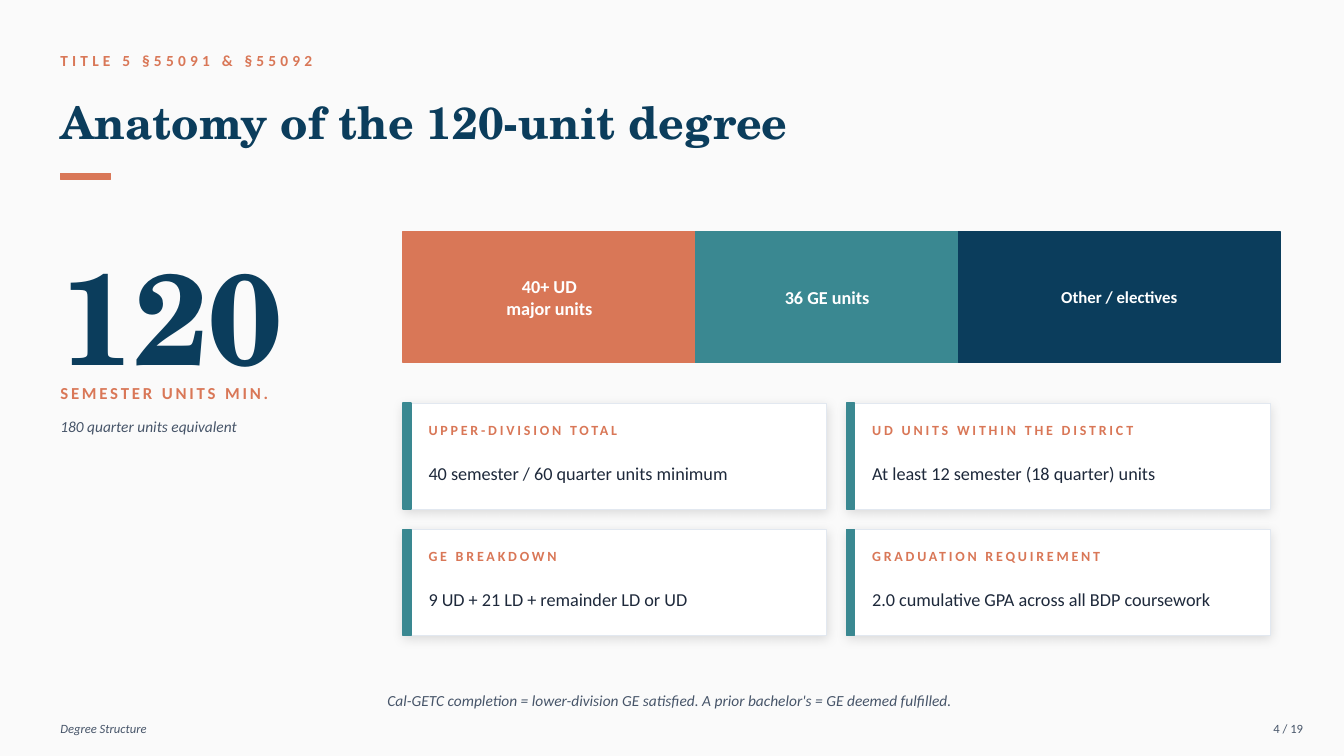
from dataclasses import dataclass

from lxml import etree
from pptx import Presentation
from pptx.dml.color import RGBColor
from pptx.enum.shapes import MSO_SHAPE
from pptx.enum.text import MSO_ANCHOR, MSO_AUTO_SIZE, PP_ALIGN
from pptx.oxml.ns import qn
from pptx.util import Cm, Pt

RECTANGLE = MSO_SHAPE.RECTANGLE
TOP, MIDDLE = MSO_ANCHOR.TOP, MSO_ANCHOR.MIDDLE
LEFT, CENTER, RIGHT = PP_ALIGN.LEFT, PP_ALIGN.CENTER, PP_ALIGN.RIGHT
NO_AUTOFIT = MSO_AUTO_SIZE.NONE


@dataclass(frozen=True)
class TextStyle:
    size: float
    color: str
    font: str = "Calibri"
    bold: bool = False
    italic: bool = False
    spacing: float = 0


class Theme:
    """Colours and type sizes."""
    PAPER, WHITE, BORDER = "FAFAFA", "FFFFFF", "E2E8F0"
    NAVY, TEAL, CORAL = "0B3D5C", "3A8891", "D97757"
    INK, MUTED, SHADOW = "1E293B", "475569", "000000"
    SERIF = "TeX Gyre Schola"

    EYEBROW = TextStyle(11, CORAL, bold=True, spacing=3)
    TITLE = TextStyle(32, NAVY, SERIF, bold=True)
    BIG_NUMBER = TextStyle(92, NAVY, SERIF, bold=True)
    UNIT_LABEL = TextStyle(12, CORAL, bold=True, spacing=2)
    NOTE = TextStyle(11, MUTED, italic=True)
    SEGMENT = TextStyle(13, WHITE, bold=True)
    SEGMENT_SMALL = TextStyle(12, WHITE, bold=True)
    CARD_LABEL = TextStyle(10, CORAL, bold=True, spacing=2)
    CARD_TEXT = TextStyle(13, INK)
    FOOTER = TextStyle(9, MUTED, italic=True)
    PAGE = TextStyle(9, MUTED)


class SlideBuilder:
    def __init__(self, slide, theme):
        self.slide, self.theme = slide, theme
        slide.background.fill.solid()
        slide.background.fill.fore_color.rgb = RGBColor.from_string(theme.PAPER)

    def set_text(self, frame, lines, style, align=LEFT, anchor=MIDDLE):
        frame.word_wrap = True
        frame.auto_size = NO_AUTOFIT
        frame.vertical_anchor = anchor
        frame.margin_left = frame.margin_right = 0
        frame.margin_top = frame.margin_bottom = 0
        for index, line in enumerate(lines):
            paragraph = frame.add_paragraph() if index else frame.paragraphs[0]
            paragraph.alignment = align
            run = paragraph.add_run()
            run.text = line
            font = run.font
            font.name, font.size = style.font, Pt(style.size)
            font.bold, font.italic = style.bold, style.italic
            font.color.rgb = RGBColor.from_string(style.color)
            if style.spacing:
                run._r.get_or_add_rPr().set("spc", str(int(style.spacing * 100)))

    def title(self, box, text):
        heading = self.slide.shapes.title
        heading.left, heading.top, heading.width, heading.height = map(Cm, box)
        self.set_text(heading.text_frame, [text], self.theme.TITLE)

    def text(self, box, line, style, align=LEFT, anchor=MIDDLE):
        label = self.slide.shapes.add_textbox(*map(Cm, box))
        self.set_text(label.text_frame, [line], style, align, anchor)

    def block(self, box, fill, line=None, line_width=1):
        block = self.slide.shapes.add_shape(RECTANGLE, *map(Cm, box))
        block.shadow.inherit = False
        block.fill.solid()
        block.fill.fore_color.rgb = RGBColor.from_string(fill)
        block.line.color.rgb = RGBColor.from_string(line or fill)
        block.line.width = Pt(line_width)
        return block

    def soft_shadow(self, block):
        effects = block._element.spPr.find(qn("a:effectLst"))
        shadow = etree.SubElement(effects, qn("a:outerShdw"), blurRad=str(Pt(8)),
                                  dist=str(Pt(2)), dir="5400000", rotWithShape="0")
        color = etree.SubElement(shadow, qn("a:srgbClr"), val=self.theme.SHADOW)
        etree.SubElement(color, qn("a:alpha"), val="12000")

    def segment(self, box, fill, lines, style):
        segment = self.block(box, fill)
        self.set_text(segment.text_frame, lines, style, CENTER)

    def card(self, left, top, label, text):
        theme = self.theme
        panel = self.block((left, top, 10.67, 2.67), theme.WHITE, theme.BORDER, 0.75)
        self.soft_shadow(panel)
        self.block((left, top, 0.2, 2.67), theme.TEAL)
        self.text((left + 0.64, top + 0.3, 10, 0.76), label, theme.CARD_LABEL)
        self.text((left + 0.64, top + 1.07, 10, 1.4), text, theme.CARD_TEXT)


def main():
    deck = Presentation()
    deck.slide_width, deck.slide_height = Cm(33.87), Cm(19.05)
    theme = Theme()
    page = SlideBuilder(deck.slides.add_slide(deck.slide_layouts[5]), theme)
    margin, main_left, main_width = 1.52, 10.16, 22.1

    # Heading
    page.text((margin, 1.14, 25.4, 0.76), "TITLE 5 §55091 & §55092", theme.EYEBROW)
    page.title((margin, 1.98, 30.48, 2.16), "Anatomy of the 120-unit degree")
    page.block((margin, 4.37, 1.27, 0.15), theme.CORAL)

    # Unit total
    page.text((margin, 5.97, 8.13, 3.81), "120", theme.BIG_NUMBER, anchor=TOP)
    page.text((margin, 9.53, 8.13, 0.76), "SEMESTER UNITS MIN.", theme.UNIT_LABEL)
    page.text((margin, 10.36, 8.13, 0.76), "180 quarter units equivalent", theme.NOTE)

    # Bar, each segment as wide as its share of the units
    segments = [
        (40, theme.CORAL, ["40+ UD", "major units"], theme.SEGMENT),
        (36, theme.TEAL, ["36 GE units"], theme.SEGMENT),
        (44, theme.NAVY, ["Other / electives"], theme.SEGMENT_SMALL),
    ]
    total_units = sum(units for units, *_ in segments)
    segment_left = main_left
    for units, fill, lines, style in segments:
        width = main_width * units / total_units
        page.segment((segment_left, 5.84, width, 3.3), fill, lines, style)
        segment_left += width

    # Requirement cards, two per row
    requirements = [
        ("UPPER-DIVISION TOTAL", "40 semester / 60 quarter units minimum"),
        ("UD UNITS WITHIN THE DISTRICT", "At least 12 semester (18 quarter) units"),
        ("GE BREAKDOWN", "9 UD + 21 LD + remainder LD or UD"),
        ("GRADUATION REQUIREMENT", "2.0 cumulative GPA across all BDP coursework"),
    ]
    for index, (label, text) in enumerate(requirements):
        row, column = divmod(index, 2)
        page.card(main_left + column * 11.18, 10.16 + row * 3.18, label, text)

    # Closing note and footer
    page.text((margin, 17.15, 30.73, 1.02),
              "Cal-GETC completion = lower-division GE satisfied. "
              "A prior bachelor's = GE deemed fulfilled.", theme.NOTE, CENTER)
    page.text((margin, 18.03, 19.81, 0.64), "Degree Structure", theme.FOOTER)
    page.text((31.06, 18.03, 1.78, 0.64), "4 / 19", theme.PAGE, RIGHT)

    deck.save("out.pptx")


if __name__ == "__main__":
    main()
